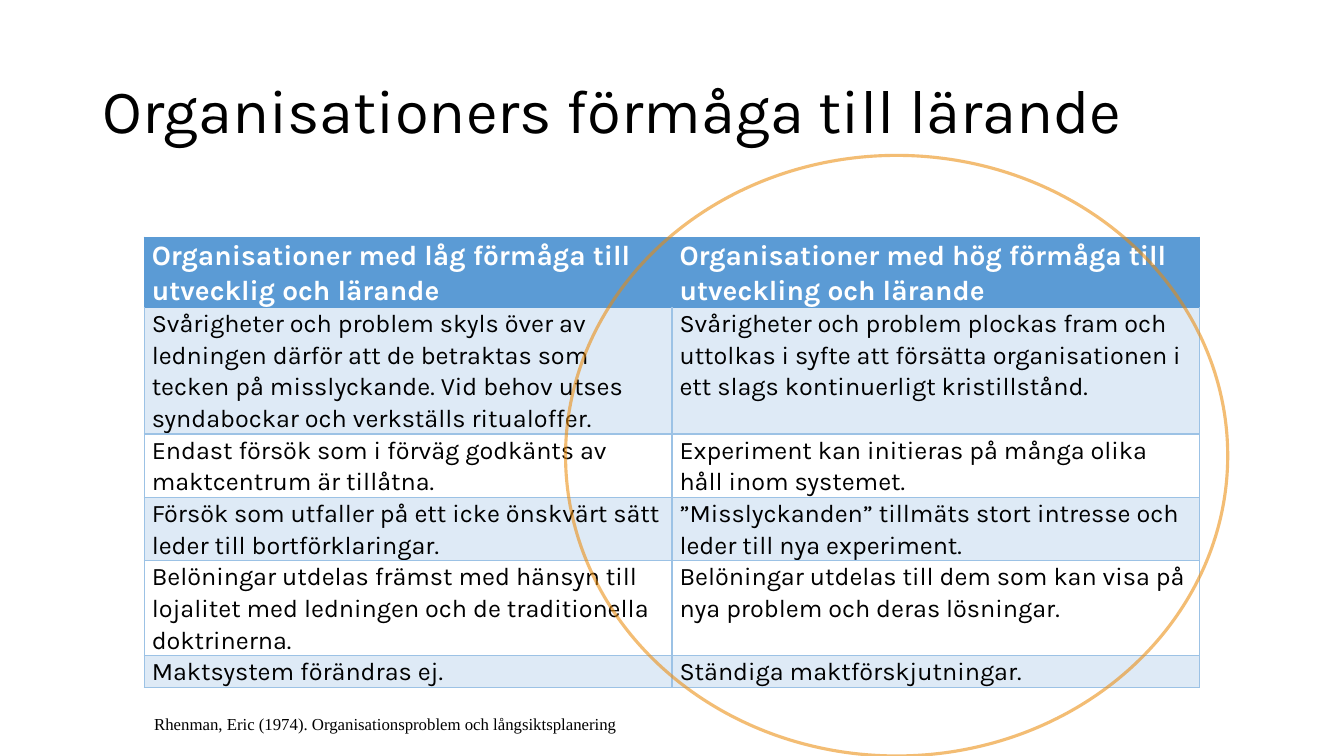
from lxml import etree
from pptx import Presentation
from pptx.dml.color import RGBColor
from pptx.enum import shapes, text
from pptx.oxml.ns import qn
from pptx.util import Pt

HEADER_BLUE, BAND_BLUE, BORDER_BLUE = "5B9BD5", "DEEAF6", "9CC2E5"
ORANGE, BLACK, WHITE = "EB8B0B", "000000", "FFFFFF"

TITLE = "Organisationers förmåga till lärande"
SOURCE = "Rhenman, Eric (1974). Organisationsproblem och långsiktsplanering"
COMPARISON = [
    ("Organisationer med låg förmåga till utvecklig och lärande",
     "Organisationer med hög förmåga till utveckling och lärande"),
    ("Svårigheter och problem skyls över av ledningen därför att de betraktas som "
     "tecken på misslyckande. Vid behov utses syndabockar och verkställs ritualoffer.",
     "Svårigheter och problem plockas fram och uttolkas i syfte att försätta "
     "organisationen i ett slags kontinuerligt kristillstånd."),
    ("Endast försök som i förväg godkänts av maktcentrum är tillåtna.",
     "Experiment kan initieras på många olika håll inom systemet."),
    ("Försök som utfaller på ett icke önskvärt sätt leder till bortförklaringar.",
     "”Misslyckanden” tillmäts stort intresse och leder till nya experiment."),
    ("Belöningar utdelas främst med hänsyn till lojalitet med ledningen och de "
     "traditionella doktrinerna.",
     "Belöningar utdelas till dem som kan visa på nya problem och deras lösningar."),
    ("Maktsystem förändras ej.", "Ständiga maktförskjutningar."),
]
ROW_HEIGHTS = [50, 90, 45, 45, 67.5, 22.5]
COLUMN_WIDTH = 377


def color(hex_value):
    return RGBColor.from_string(hex_value)


def write(frame, words, size, hex_value, font="Karla", bold=False, spacing=1.07):
    frame.text = words
    para = frame.paragraphs[0]
    para.line_spacing = spacing
    para.font.name, para.font.size, para.font.bold = font, Pt(size), bold
    para.font.color.rgb = color(hex_value)
    return para


def add_title(page):
    title = page.shapes.title
    title.left, title.top, title.width, title.height = Pt(66), Pt(28.75), Pt(828), Pt(104.4)
    title.text_frame.vertical_anchor = text.MSO_ANCHOR.MIDDLE
    para = write(title.text_frame, TITLE, 44, BLACK, spacing=0.9)
    para.alignment = text.PP_ALIGN.LEFT


def set_borders(cell, hex_value, top):
    """Draw 1 pt lines round a cell; the top one has its own colour."""
    properties = cell._tc.get_or_add_tcPr()
    for place, side in enumerate(("lnL", "lnR", "lnT", "lnB")):
        line = etree.Element(qn(f"a:{side}"), w=str(Pt(1)))
        fill = etree.SubElement(line, qn("a:solidFill"))
        etree.SubElement(fill, qn("a:srgbClr"), val=top if side == "lnT" else hex_value)
        properties.insert(place, line)


def format_cell(cell, words, row):
    header = row == 0
    cell.margin_left = cell.margin_right = Pt(5.4)
    cell.margin_top = cell.margin_bottom = 0
    write(cell.text_frame, words, 20 if header else 18, WHITE if header else BLACK, bold=header)
    if header or row % 2:
        cell.fill.solid()
        cell.fill.fore_color.rgb = color(HEADER_BLUE if header else BAND_BLUE)
    else:
        cell.fill.background()
    set_borders(cell, HEADER_BLUE if header else BORDER_BLUE,
                HEADER_BLUE if row < 2 else BORDER_BLUE)


def add_comparison(page):
    table = page.shapes.add_table(len(COMPARISON), 2, Pt(103), Pt(169.5),
                                  Pt(2 * COLUMN_WIDTH), Pt(sum(ROW_HEIGHTS))).table
    for column in table.columns:
        column.width = Pt(COLUMN_WIDTH)
    for row, (pair, height) in enumerate(zip(COMPARISON, ROW_HEIGHTS)):
        table.rows[row].height = Pt(height)
        for column, words in enumerate(pair):
            format_cell(table.cell(row, column), words, row)


def add_highlight(page):
    """Ring the right-hand column with a half-transparent ellipse."""
    ring = page.shapes.add_shape(shapes.MSO_SHAPE.OVAL, Pt(404), Pt(111), Pt(473), Pt(429))
    ring.shadow.inherit = False
    ring.fill.background()
    ring.line.width = Pt(2.25)
    ring.line.color.rgb = color(ORANGE)
    tint = ring.line._ln.find(".//" + qn("a:srgbClr"))
    etree.SubElement(tint, qn("a:alpha"), val="56000")


def add_source(page):
    box = page.shapes.add_textbox(Pt(103), Pt(505.5), Pt(480), Pt(21.6))
    box.text_frame.word_wrap = True
    box.text_frame.auto_size = text.MSO_AUTO_SIZE.SHAPE_TO_FIT_TEXT
    para = write(box.text_frame, SOURCE, 12, BLACK, font="Times New Roman")
    para.space_after = Pt(8)


def main():
    deck = Presentation()
    deck.slide_width, deck.slide_height = Pt(960), Pt(540)
    page = deck.slides.add_slide(deck.slide_layouts[5])
    add_title(page)
    add_comparison(page)
    add_highlight(page)
    add_source(page)
    deck.save("out.pptx")


if __name__ == "__main__":
    main()
